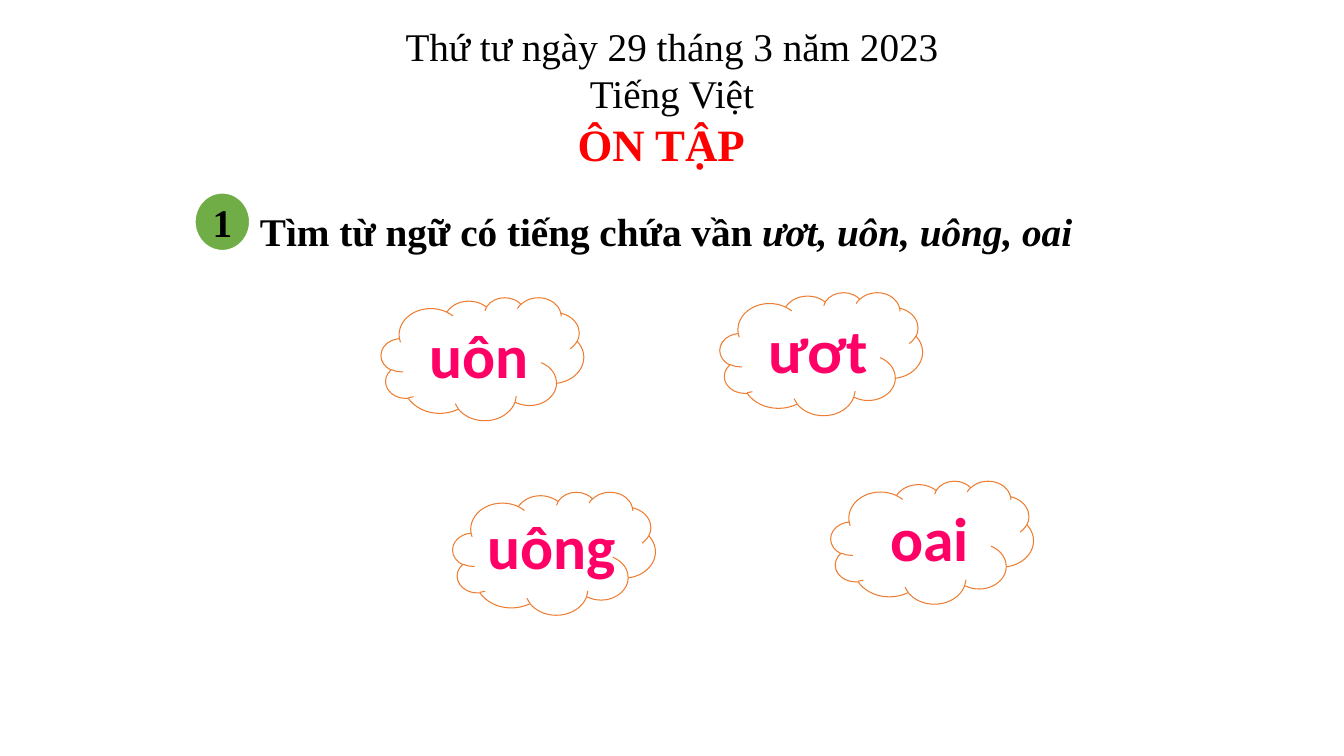
from pptx import Presentation
from pptx.dml.color import RGBColor
from pptx.enum.shapes import MSO_SHAPE
from pptx.enum.text import MSO_ANCHOR, PP_ALIGN
from pptx.util import Pt

PX = 9144
OVAL, CLOUD = MSO_SHAPE.OVAL, MSO_SHAPE.CLOUD
LEFT, CENTER = PP_ALIGN.LEFT, PP_ALIGN.CENTER
MIDDLE = MSO_ANCHOR.MIDDLE
SERIF, SANS = "Times New Roman", "Calibri"
COLORS = {"black": "000000", "red": "FF0000", "pink": "FF0066",
          "green": "70AD47", "white": "FFFFFF", "orange": "ED7D31"}
CLOUD_W, CLOUD_H = 201, 122
CLOUDS = [
    ("uôn", 378, 295, (38, 15, 133)),
    ("uông", 449, 488, (25, 11, 151)),
    ("ươt", 714, 290, (38, 15, 133)),
    ("oai", 824, 477, (49, 14, 122)),
]


def rgb(name):
    """Return the named colour."""
    return RGBColor.from_string(COLORS[name])


def style(run, size, color="black", font=SERIF, bold=True):
    """Format one run."""
    run.font.size = Pt(size)
    run.font.name = font
    run.font.bold = bold
    run.font.color.rgb = rgb(color)


def add_text(s, box, text, size, align=LEFT, **look):
    """Add a text box and return its text frame."""
    tf = s.shapes.add_textbox(*(v * PX for v in box)).text_frame
    tf.word_wrap = True
    tf.text = text
    for p in tf.paragraphs:
        p.alignment = align
        for r in p.runs:
            style(r, size, **look)
    return tf


def add_outlined(s, kind, box, line, width):
    """Add an unfilled preset shape with a coloured outline."""
    sp = s.shapes.add_shape(kind, *(v * PX for v in box))
    sp.shadow.inherit = False
    sp.fill.background()
    sp.line.color.rgb = rgb(line)
    sp.line.width = Pt(width)
    return sp


def add_heading(s, x, y, w):
    """Place the date, subject and lesson title."""
    add_text(s, (x, y, w, 104), "Thứ tư ngày 29 tháng 3 năm 2023\nTiếng Việt",
             28, CENTER, bold=False)
    add_text(s, (x + 255, y + 94, 207, 64), "ÔN TẬP", 32, color="red")


def add_task(s, x, y):
    """Place the numbered badge and the task sentence."""
    badge = add_outlined(s, OVAL, (x, y, 55, 58), "white", 1.5)
    badge.fill.solid()
    badge.fill.fore_color.rgb = rgb("green")
    tf = badge.text_frame
    tf.text = "1"
    tf.vertical_anchor = MIDDLE
    p = tf.paragraphs[0]
    p.alignment = CENTER
    style(p.runs[0], 28)

    tf = add_text(s, (x + 55, y + 10, 838, 57), "Tìm từ ngữ có tiếng chứa vần ", 28)
    r = tf.paragraphs[0].add_run()
    r.text = "ươt, uôn, uông, oai"
    style(r, 28)
    r.font.italic = True


def add_cloud(s, rhyme, x, y, label):
    """Place a cloud with its rhyme, the label given as offsets and width."""
    dx, dy, w = label
    add_outlined(s, CLOUD, (x, y, CLOUD_W, CLOUD_H), "orange", 0.75)
    add_text(s, (x + dx, y + dy, w, 84), rhyme, 44, color="pink", font=SANS)


def main():
    """Build the slide and save it."""
    prs = Presentation()
    prs.slide_width, prs.slide_height = 1333 * PX, 750 * PX
    s = prs.slides.add_slide(prs.slide_layouts[6])
    add_heading(s, 308, 17, 717)
    add_task(s, 193, 191)
    for cloud in CLOUDS:
        add_cloud(s, *cloud)
    prs.save("out.pptx")


if __name__ == "__main__":
    main()
